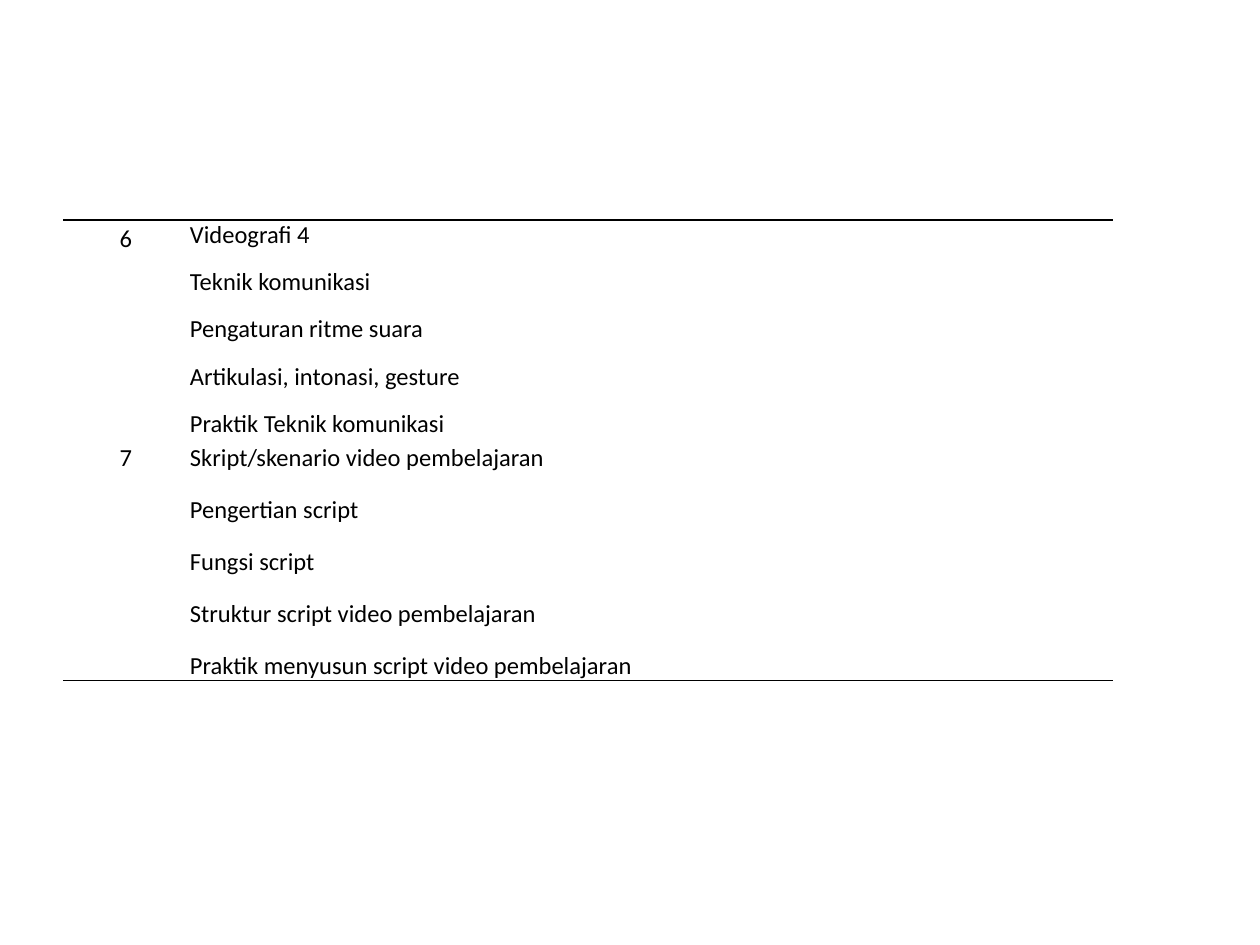
from lxml import etree
from pptx import Presentation
from pptx import util as u
from pptx.dml.color import RGBColor
from pptx.enum import text
from pptx.oxml.ns import qn

PX = 914400 // 126
COLORS = {"ink": "000000"}
FONT = "Calibri"

# Each meeting: number, topics, row height, line spacing of the topics
MEETINGS = [
    ("6", ["Videografi 4", "Teknik komunikasi", "Pengaturan ritme suara",
           "Artikulasi, intonasi, gesture", "Praktik Teknik komunikasi"], 50, None),
    ("7", ["Skript/skenario video pembelajaran", "Pengertian script",
           "Fungsi script", "Struktur script video pembelajaran",
           "Praktik menyusun script video pembelajaran"], 25, 1.15),
]


def px(length):
    return u.Emu(length * PX)


def set_borders(cell, ruled):
    """Rule the named sides of a cell and clear the others."""
    props = cell._tc.get_or_add_tcPr()
    for place, side in enumerate("LRTB"):
        line = etree.Element(qn(f"a:ln{side}"), w=str(u.Pt(1)))
        if side in ruled:
            fill = etree.SubElement(line, qn("a:solidFill"))
            etree.SubElement(fill, qn("a:srgbClr"), val=COLORS["ink"])
        else:
            etree.SubElement(line, qn("a:noFill"))
        props.insert(place, line)


def fill_cell(cell, lines, align, spacing, ruled):
    cell.fill.background()
    cell.margin_left = cell.margin_right = px(1)
    cell.margin_top = cell.margin_bottom = 0
    frame = cell.text_frame
    for index, line in enumerate(lines):
        paragraph = frame.add_paragraph() if index else frame.paragraphs[0]
        paragraph.alignment = align
        paragraph.space_after = u.Pt(10)
        if spacing:
            paragraph.line_spacing = spacing
        run = paragraph.add_run()
        run.text = line
        run.font.name = FONT
        run.font.size = u.Pt(14)
        run.font.color.rgb = RGBColor.from_string(COLORS["ink"])
    set_borders(cell, ruled)


def add_schedule(slide, left, top, width, height):
    frame = slide.shapes.add_table(len(MEETINGS), 2, px(left), px(top),
                                   px(width), px(height))
    schedule = frame.table
    schedule.first_row = schedule.horz_banding = False
    number_width = 126
    schedule.columns[0].width = px(number_width)
    schedule.columns[1].width = px(width - number_width)
    last = len(MEETINGS) - 1
    for row, (number, topics, row_height, spacing) in enumerate(MEETINGS):
        schedule.rows[row].height = px(row_height)
        ruled = ("T" if row == 0 else "") + ("B" if row == last else "")
        fill_cell(schedule.cell(row, 0), [number], text.PP_ALIGN.CENTER, 1.15, ruled)
        fill_cell(schedule.cell(row, 1), topics, text.PP_ALIGN.LEFT, spacing, ruled)
    frame.height = px(height)


def main():
    deck = Presentation()
    deck.slide_width, deck.slide_height = px(1260), px(945)
    slide = deck.slides.add_slide(deck.slide_layouts[6])
    add_schedule(slide, 63, 220, 1050, 454)
    deck.save("out.pptx")


if __name__ == "__main__":
    main()
